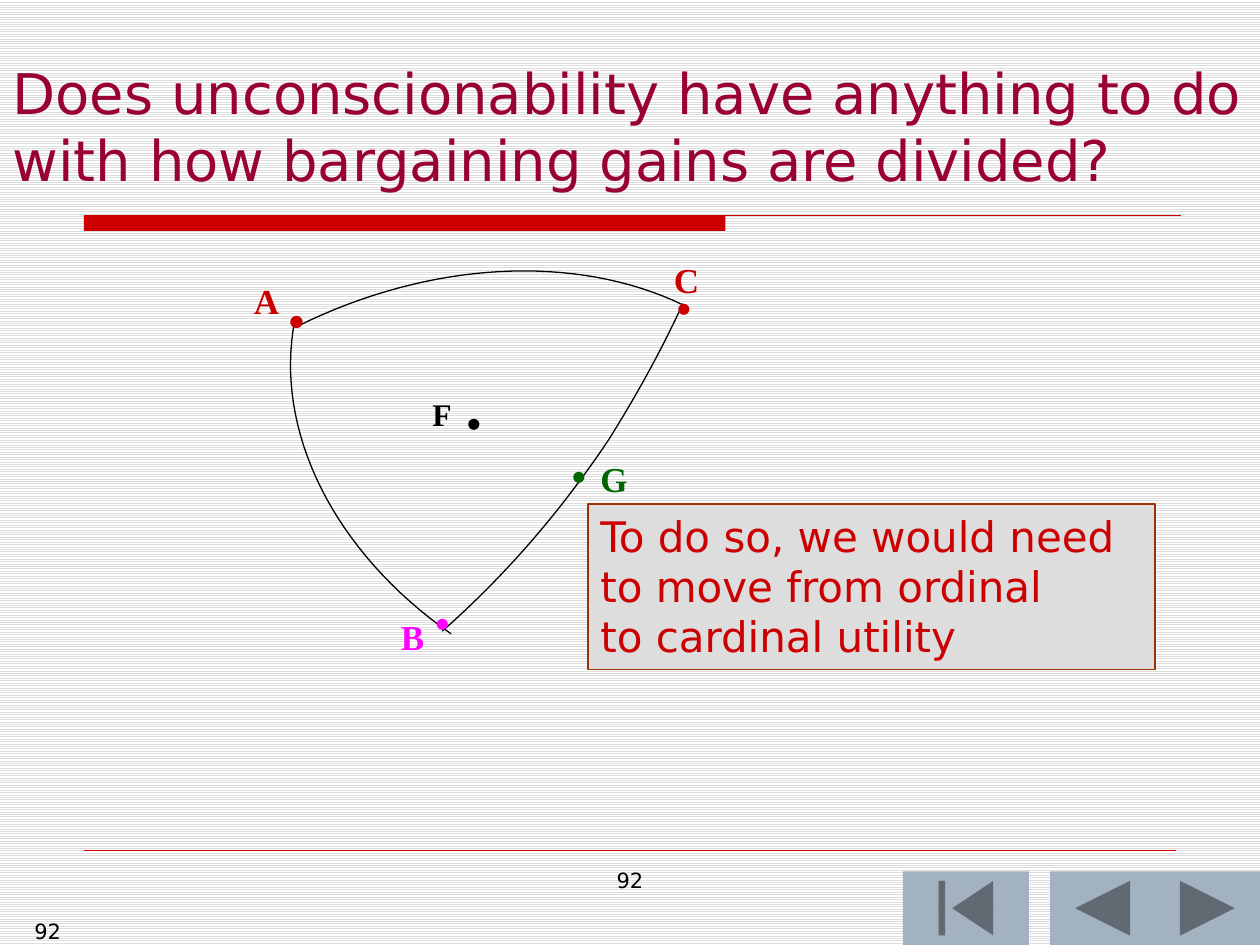
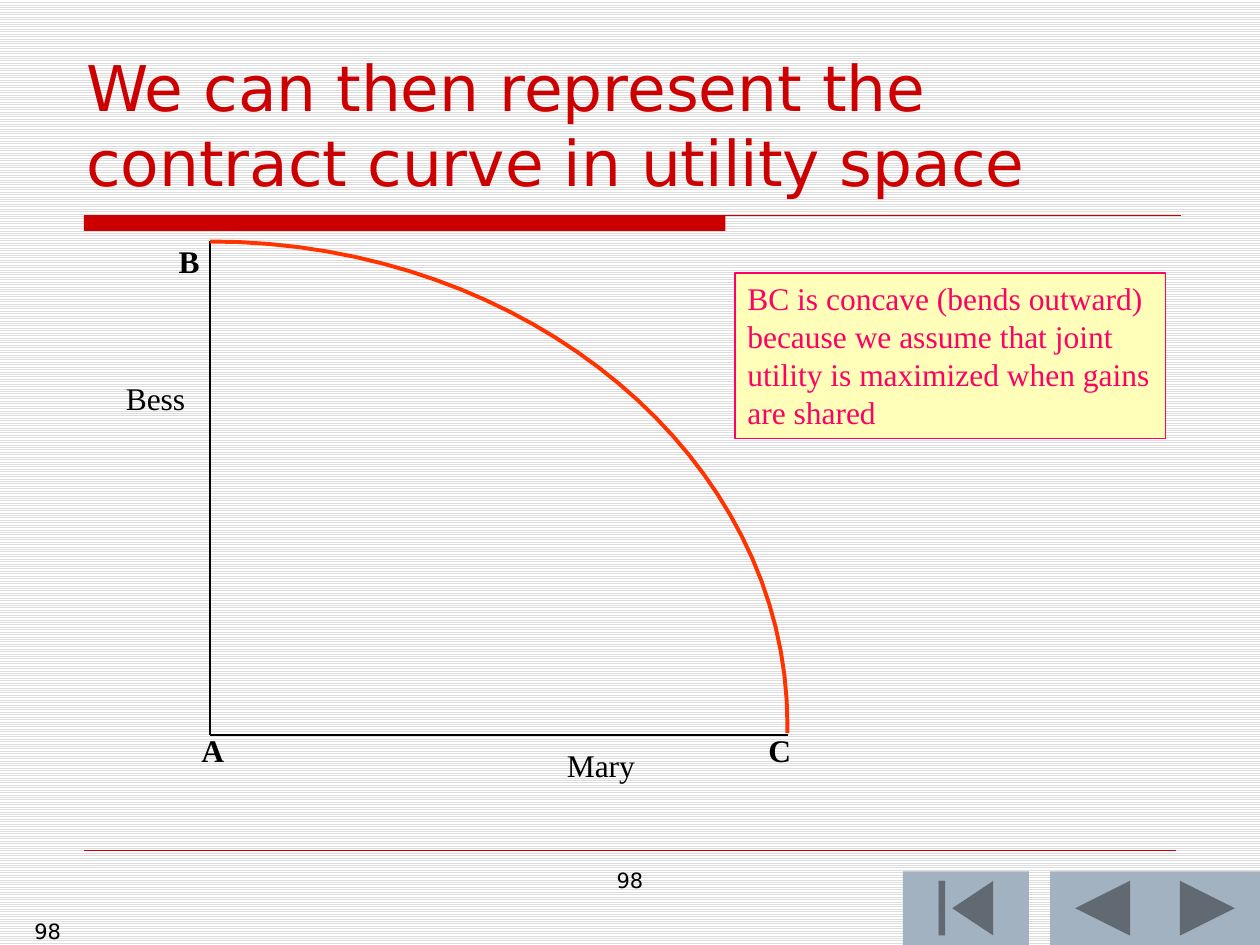
from lxml.etree import SubElement
from pptx import Presentation
from pptx.dml.color import RGBColor
from pptx.enum.dml import MSO_PATTERN
from pptx.enum.shapes import MSO_CONNECTOR, MSO_SHAPE
from pptx.enum.text import MSO_ANCHOR, MSO_AUTO_SIZE, PP_ALIGN
from pptx.oxml.ns import qn
from pptx.util import Pt

RED = RGBColor(0xCC, 0x00, 0x00)
MAROON = RGBColor(0x99, 0x00, 0x33)
BROWN = RGBColor(0x99, 0x33, 0x00)
ORANGE = RGBColor(0xFF, 0x33, 0x00)
PINK = RGBColor(0xFF, 0x00, 0x66)
MAGENTA = RGBColor(0xFF, 0x00, 0xFF)
GREEN = RGBColor(0x00, 0x66, 0x00)
BLACK = RGBColor(0x00, 0x00, 0x00)
WHITE = RGBColor(0xFF, 0xFF, 0xFF)
GREY = RGBColor(0xDD, 0xDD, 0xDD)
YELLOW = RGBColor(0xFF, 0xFF, 0xB9)
BUTTON_BLUE = RGBColor(0xA3, 0xB2, 0xC1)

SANS = "DejaVu Sans"
SERIF = "Times New Roman"
CURVE_STEPS = 32

BUTTONS = [
    (MSO_SHAPE.ACTION_BUTTON_BACK_OR_PREVIOUS, 600, 60),
    (MSO_SHAPE.ACTION_BUTTON_BEGINNING, 516, 72),
    (MSO_SHAPE.ACTION_BUTTON_FORWARD_OR_NEXT, 660, 60),
]

SLIDES = [
    {
        "number": "92",
        "title": "Does unconscionability have anything to do with how bargaining gains are divided?",
        "title_box": (0, 30, 720, 84),
        "title_format": {"size": Pt(32), "color": MAROON},
        "axes": [],
        "curves": [
            ([(169.9, 186.5), (245.5, 149), (329, 144.7), (390.2, 174.2)], BLACK, 0.75),
            ([(257.8, 362.2), (190.8, 315.4), (156.2, 246.2), (168.5, 182.9)], BLACK, 0.75),
            ([(252.7, 360.7), (288.7, 329), (320.4, 292.3), (347.8, 251.3),
              (363.6, 226.1), (378, 200.2), (390.2, 173.5)], BLACK, 0.75),
        ],
        "labels": [
            ("•", 156, 168, 20, SANS, RED, True),
            ("•", 240, 342, 18, SANS, MAGENTA, True),
            ("•", 378, 162, 18, SANS, RED, True),
            ("•", 258, 228, 18, SANS, BLACK, True),
            ("•", 318, 258, 18, SANS, GREEN, True),
            ("A", 138, 156, 20, SERIF, RED, True),
            ("B", 222, 348, 20, SERIF, MAGENTA, True),
            ("C", 378, 144, 20, SERIF, RED, True),
            ("F", 240, 222, 18, SERIF, BLACK, True),
            ("G", 336, 258, 20, SERIF, GREEN, True),
        ],
        "note": ["To do so, we would need", "to move from ordinal", "to cardinal utility"],
        "note_box": (336, 288, 324, 94.5),
        "note_colors": (GREY, BROWN),
        "note_format": {"size": Pt(24), "name": SANS, "color": RED},
    },
    {
        "number": "98",
        "title": "We can then represent the contract curve in utility space",
        "title_box": (42, 24, 636, 93.6),
        "title_format": {"size": Pt(36), "color": RED},
        "axes": [(120, 420, 450, 420), (120, 420, 120, 138)],
        "curves": [
            ([(120, 138), (302.4, 138), (450, 262), (450, 414),
              (450, 416), (450, 418), (450, 419)], ORANGE, 2.25),
        ],
        "labels": [
            ("A", 108, 414, 18, SERIF, BLACK, True),
            ("B", 95, 135, 18, SERIF, BLACK, True),
            ("C", 432, 414, 18, SERIF, BLACK, True),
            ("Mary", 316.8, 423, 18, SERIF, BLACK, False),
            ("Bess", 64.8, 213, 18, SERIF, BLACK, False),
        ],
        "note": ["BC is concave (bends outward) because we assume that joint "
                 "utility is maximized when gains are shared"],
        "note_box": (420, 156, 246, 94.5),
        "note_colors": (YELLOW, PINK),
        "note_format": {"size": Pt(18), "name": SERIF, "color": PINK},
    },
]


def points(values):
    return [Pt(value) for value in values]


def set_text(shape, lines, font_format, align=PP_ALIGN.LEFT, anchor=MSO_ANCHOR.TOP):
    frame = shape.text_frame
    frame.text = "\n".join(lines)
    frame_format = {"word_wrap": True, "auto_size": MSO_AUTO_SIZE.NONE,
                    "vertical_anchor": anchor}
    for name, value in frame_format.items():
        setattr(frame, name, value)
    for paragraph in frame.paragraphs:
        paragraph.alignment = align
        for name, value in font_format.items():
            if name == "color":
                paragraph.font.color.rgb = value
            else:
                setattr(paragraph.font, name, value)


def add_text(slide, box, text, font_format, align=PP_ALIGN.LEFT):
    set_text(slide.shapes.add_textbox(*points(box)), [text], font_format, align)


def add_box(slide, kind, box, fill, line=None):
    shape = slide.shapes.add_shape(kind, *points(box))
    shape.shadow.inherit = False
    shape.fill.solid()
    shape.fill.fore_color.rgb = fill
    if line is None:
        shape.line.fill.background()
    else:
        shape.line.color.rgb = line
        shape.line.width = Pt(0.75)
    return shape


def add_line(slide, ends, color, width):
    connector = slide.shapes.add_connector(MSO_CONNECTOR.STRAIGHT, *points(ends))
    connector.line.color.rgb = color
    connector.line.width = Pt(width)
    SubElement(connector._element.spPr, qn("a:effectLst"))


def bezier_point(controls, t):
    weights = ((1 - t) ** 3, 3 * t * (1 - t) ** 2, 3 * t ** 2 * (1 - t), t ** 3)
    return tuple(sum(weight * control[axis] for weight, control in zip(weights, controls))
                 for axis in (0, 1))


def add_curve(slide, controls, color, width):
    vertices = [
        points(bezier_point(controls[start:start + 4], step / CURVE_STEPS))
        for start in range(0, len(controls) - 1, 3)
        for step in range(1, CURVE_STEPS + 1)
    ]
    builder = slide.shapes.build_freeform(*points(controls[0]))
    builder.add_line_segments(vertices, close=False)
    curve = builder.convert_to_shape()
    curve.shadow.inherit = False
    curve.fill.background()
    curve.line.color.rgb = color
    curve.line.width = Pt(width)


def add_frame(slide, number):
    fill = slide.background.fill
    fill.patterned()
    fill.pattern = MSO_PATTERN.LIGHT_HORIZONTAL
    fill.fore_color.rgb = GREY
    fill.back_color.rgb = WHITE
    add_box(slide, MSO_SHAPE.RECTANGLE, (48, 123, 366.5, 9), RED)
    add_line(slide, (48, 123, 674.6, 123), RED, 0.75)
    add_line(slide, (48, 486, 672, 486), RED, 0.25)
    for kind, left, width in BUTTONS:
        add_box(slide, kind, (left, 498, width, 42), BUTTON_BLUE)
    number_format = {"size": Pt(12), "name": SANS, "color": BLACK}
    add_text(slide, (0, 521.3, 42, 18.7), number, number_format, PP_ALIGN.RIGHT)
    add_text(slide, (246, 492, 228, 37.5), number, number_format, PP_ALIGN.CENTER)


def add_title(slide, content):
    title = slide.shapes.title
    for name, value in zip(("left", "top", "width", "height"), points(content["title_box"])):
        setattr(title, name, value)
    set_text(title, [content["title"]], {"name": SANS, **content["title_format"]},
             anchor=MSO_ANCHOR.MIDDLE)


def build_slide(presentation, content):
    slide = presentation.slides.add_slide(presentation.slide_layouts[5])
    add_frame(slide, content["number"])
    add_title(slide, content)
    for ends in content["axes"]:
        add_line(slide, ends, BLACK, 0.75)
    for curve in content["curves"]:
        add_curve(slide, *curve)
    for text, left, top, size, font, color, bold in content["labels"]:
        box = (left, top, 32 if len(text) == 1 else 60, size * 1.6)
        add_text(slide, box, text,
                 {"size": Pt(size), "name": font, "color": color, "bold": bold})
    note = add_box(slide, MSO_SHAPE.RECTANGLE, content["note_box"], *content["note_colors"])
    set_text(note, content["note"], content["note_format"])


def main():
    presentation = Presentation()
    presentation.slide_width = Pt(720)
    presentation.slide_height = Pt(540)
    for content in SLIDES:
        build_slide(presentation, content)
    presentation.save("out.pptx")


if __name__ == "__main__":
    main()
